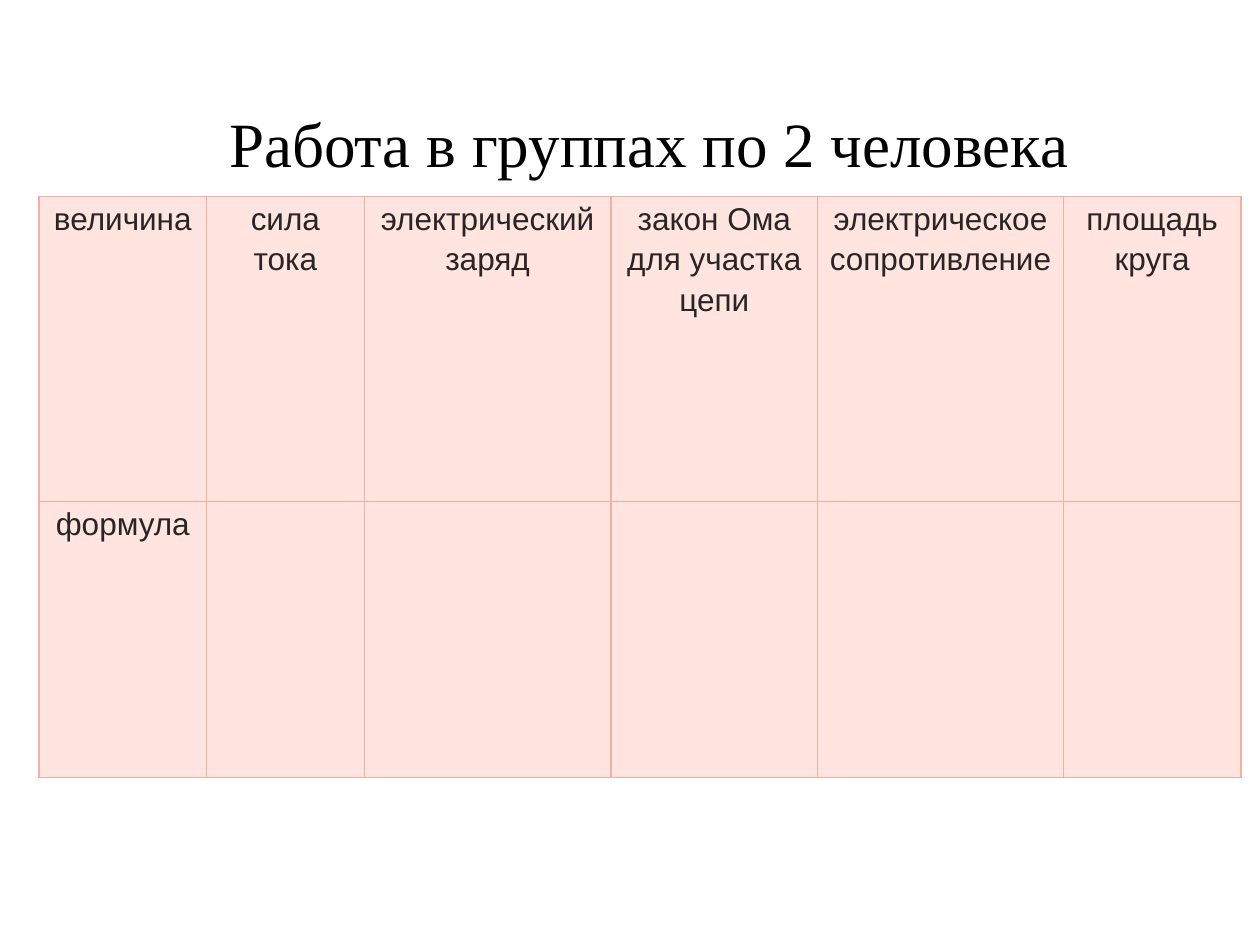
from lxml.etree import SubElement
from pptx import Presentation
from pptx.dml.color import RGBColor as RGB
from pptx.enum.text import MSO_ANCHOR as ANCHOR, PP_ALIGN as ALIGN
from pptx.oxml.ns import qn
from pptx.util import Inches, Pt

COLORS = {"title": "000000", "text": "262626", "fill": "FFE4DF", "border": "F0B1A4"}
COLS = [1.33, 1.25, 1.96, 1.64, 1.95, 1.41]
ROWS = [2.42, 2.19]
CELLS = [
    ["величина", "сила тока", "электрический заряд", "закон Ома для участка цепи",
     "электрическое сопротивление", "площадь круга"],
    ["формула"] + [""] * 5,
]


def write(tf, text, size=18, font="Arial", color="text", align=ALIGN.LEFT, spacing=None):
    p = tf.paragraphs[0]
    p.alignment = align
    p.line_spacing = spacing
    r = p.add_run()
    r.text = text
    r.font.size = Pt(size)
    r.font.name = font
    r.font.color.rgb = RGB.from_string(COLORS[color])


def add_title(slide, text, x, y, w, h):
    tf = slide.shapes.add_textbox(*map(Inches, (x, y, w, h))).text_frame
    tf.word_wrap = False
    tf.vertical_anchor = ANCHOR.TOP
    write(tf, text, size=36, font="Times New Roman", color="title")


def style_cell(cell):
    cell.margin_left = cell.margin_right = Inches(0.07)
    cell.margin_top = cell.margin_bottom = 0
    # Borders come before the fill in the cell properties
    props = cell._tc.get_or_add_tcPr()
    for side in ("L", "R", "T", "B"):
        line = SubElement(props, qn(f"a:ln{side}"), w=str(Pt(0.75)))
        solid = SubElement(line, qn("a:solidFill"))
        SubElement(solid, qn("a:srgbClr"), val=COLORS["border"])
    cell.fill.solid()
    cell.fill.fore_color.rgb = RGB.from_string(COLORS["fill"])


def add_grid(slide, x, y):
    size = Inches(sum(COLS)), Inches(sum(ROWS))
    table = slide.shapes.add_table(len(ROWS), len(COLS), Inches(x), Inches(y), *size).table
    table.first_row = table.horz_banding = False
    for col, width in zip(table.columns, COLS):
        col.width = Inches(width)
    for row, height, texts in zip(table.rows, ROWS, CELLS):
        row.height = Inches(height)
        for cell, text in zip(row.cells, texts):
            style_cell(cell)
            if text:
                write(cell.text_frame, text, align=ALIGN.CENTER, spacing=1.15)


def main():
    prs = Presentation()
    prs.slide_width, prs.slide_height = Inches(10), Inches(7.5)
    slide = prs.slides.add_slide(prs.slide_layouts[6])
    # Table of quantities and formulas
    add_grid(slide, 0.31, 1.56)
    # Heading
    add_title(slide, "Работа в группах по 2 человека", 1.72, 0.78, 6.93, 1.01)
    prs.save("out.pptx")


if __name__ == "__main__":
    main()
